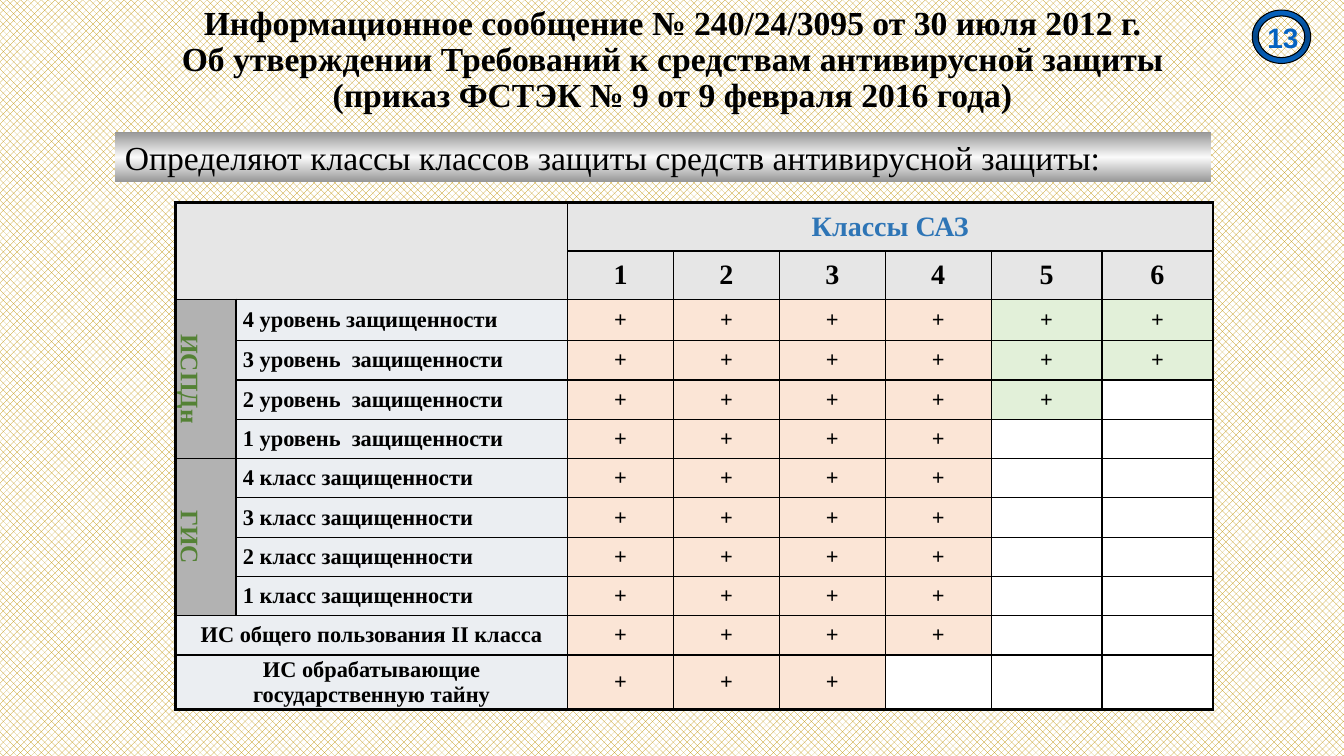
from copy import deepcopy

from lxml.etree import SubElement
from pptx import Presentation
from pptx.dml.color import RGBColor
from pptx.enum.dml import MSO_PATTERN
from pptx.enum.shapes import MSO_SHAPE as SHAPE
from pptx.enum.text import MSO_ANCHOR as ANCHOR, PP_ALIGN as ALIGN
from pptx.oxml.ns import qn
from pptx.util import Inches, Pt

TITLE = [
    "Информационное сообщение № 240/24/3095 от 30 июля 2012 г.",
    "Об утверждении Требований к средствам антивирусной защиты",
    "(приказ ФСТЭК № 9 от 9 февраля 2016 года)",
]
BANNER = "Определяют классы классов защиты средств антивирусной защиты:"
NUMBER = "13"
HEADING = "Классы САЗ"
CLASSES = 6
COMMON_CLASSES = 4  # pluses up to this class are peach, later ones green
# group (None spans both label columns), then (label, number of pluses)
GROUPS = [
    ("ИСПДн", [("4 уровень защищенности", 6), ("3 уровень  защищенности", 6),
               ("2 уровень  защищенности", 5), ("1 уровень  защищенности", 4)]),
    ("ГИС", [("4 класс защищенности", 4), ("3 класс защищенности", 4),
             ("2 класс защищенности", 4), ("1 класс защищенности", 4)]),
    (None, [("ИС общего пользования II класса", 4),
            ("ИС обрабатывающие государственную тайну", 3)]),
]
COLS = [0.6, 3.29] + [1.05] * 4 + [1.1] * 2
ROWS = [0.48, 0.48, 0.41] + [0.39] * 8 + [0.54]
HEAD, GROUP, LABEL = "E6E6E6", "B2B2B2", "EBEEF2"
PEACH, GREEN, WHITE = "FBE5D6", "E2F0D9", "FFFFFF"
THIN, THICK = 1, 2.25


def rgb(value):
    return RGBColor.from_string(value)


def write(tf, lines, size=16, color="000000", bold=True, align=ALIGN.LEFT,
          font="Times New Roman", spacing=None):
    for i, line in enumerate(lines):
        p = tf.paragraphs[0] if i == 0 else tf.add_paragraph()
        p.alignment = align
        p.line_spacing = spacing
        r = p.add_run()
        r.text = line
        r.font.name, r.font.size, r.font.bold = font, Pt(size), bold
        r.font.color.rgb = rgb(color)


def add_box(s, x, y, w, h):
    sp = s.shapes.add_textbox(Inches(x), Inches(y), Inches(w), Inches(h))
    sp.text_frame.word_wrap = True
    sp.text_frame.vertical_anchor = ANCHOR.MIDDLE
    return sp


def add_gradient_shape(s, kind, x, y, w, h, edge, middle):
    """Add a shape shaded vertically from edge to middle and back."""
    sp = s.shapes.add_shape(kind, Inches(x), Inches(y), Inches(w), Inches(h))
    sp.shadow.inherit = False
    sp.fill.gradient()
    sp.fill.gradient_angle = 90
    stops = sp._element.spPr.find(qn("a:gradFill")).find(qn("a:gsLst"))
    stops.append(deepcopy(stops[-1]))
    for stop, pos, color in zip(sp.fill.gradient_stops, (0, 0.5, 1), (edge, middle, edge)):
        stop.position = pos
        stop.color.rgb = rgb(color)
    sp.line.fill.background()
    return sp


def set_borders(cell, left, top, bottom):
    tc_pr = cell._tc.get_or_add_tcPr()
    sides = [("L", left), ("R", THIN), ("T", top), ("B", bottom)]
    for i, (side, width) in enumerate(sides):
        ln = SubElement(tc_pr, qn("a:ln" + side), w=str(int(Pt(width))))
        fill = SubElement(ln, qn("a:solidFill"))
        SubElement(fill, qn("a:srgbClr"), val="000000")
        tc_pr.insert(i, ln)


def fill_cell(cell, back, text=None, margin=0.07, align=ALIGN.CENTER, **fmt):
    cell.fill.solid()
    cell.fill.fore_color.rgb = rgb(back)
    cell.vertical_anchor = ANCHOR.MIDDLE
    cell.margin_left = cell.margin_right = Inches(margin)
    cell.margin_top = cell.margin_bottom = 0
    if text:
        write(cell.text_frame, [text], align=align, **fmt)


def add_class_table(s):
    tbl = s.shapes.add_table(len(ROWS), len(COLS), Inches(1.74), Inches(2.01),
                             Inches(sum(COLS)), Inches(sum(ROWS))).table
    tbl.first_row = tbl.horz_banding = False
    for col, width in zip(tbl.columns, COLS):
        col.width = Inches(width)
    for row, height in zip(tbl.rows, ROWS):
        row.height = Inches(height)
    for r in range(len(ROWS)):
        for c in range(len(COLS)):
            set_borders(tbl.cell(r, c), THIN if c else THICK, THIN if r else THICK,
                        THICK if r == len(ROWS) - 1 else THIN)

    tbl.cell(0, 0).merge(tbl.cell(1, 1))
    fill_cell(tbl.cell(0, 0), HEAD)
    tbl.cell(0, 2).merge(tbl.cell(0, CLASSES + 1))
    fill_cell(tbl.cell(0, 2), HEAD, HEADING, margin=0, size=20, color="2E75B6")
    for n in range(1, CLASSES + 1):
        fill_cell(tbl.cell(1, n + 1), HEAD, str(n), margin=0, size=20)

    r = 2
    for group, items in GROUPS:
        if group:
            cell = tbl.cell(r, 0)
            cell.merge(tbl.cell(r + len(items) - 1, 0))
            fill_cell(cell, GROUP, group, size=18, color="548235")
            cell._tc.get_or_add_tcPr().set("vert", "vert")
        for label, pluses in items:
            if group:
                fill_cell(tbl.cell(r, 1), LABEL, label, align=ALIGN.LEFT)
            else:
                tbl.cell(r, 0).merge(tbl.cell(r, 1))
                fill_cell(tbl.cell(r, 0), LABEL, label)
            for n in range(1, CLASSES + 1):
                if n <= pluses:
                    fill_cell(tbl.cell(r, n + 1), PEACH if n <= COMMON_CLASSES else GREEN, "+")
                else:
                    fill_cell(tbl.cell(r, n + 1), WHITE)
            r += 1


def main():
    prs = Presentation()
    prs.slide_width, prs.slide_height = Inches(13.33), Inches(7.5)
    s = prs.slides.add_slide(prs.slide_layouts[6])
    bg = s.background.fill
    bg.patterned()
    bg.pattern = MSO_PATTERN.PERCENT_50
    bg.fore_color.rgb, bg.back_color.rgb = rgb("BF9000"), rgb(WHITE)

    banner = add_gradient_shape(s, SHAPE.RECTANGLE, 1.14, 1.31, 10.87, 0.5, "969696", "FAFAFA")
    banner.text_frame.word_wrap = True
    banner.text_frame.vertical_anchor = ANCHOR.MIDDLE
    write(banner.text_frame, [BANNER], size=24, bold=False)

    add_class_table(s)

    title = add_box(s, 0.92, 0.14, 11.5, 0.92)
    write(title.text_frame, TITLE, size=24, align=ALIGN.CENTER, spacing=0.9)

    ring = add_gradient_shape(s, SHAPE.DONUT, 12.42, 0.1, 0.58, 0.53, "0563C1", "04478A")
    ring.adjustments[0] = 0.11
    ring.line.color.rgb = rgb("000000")
    ring.line.width = Pt(0.75)

    tf = add_box(s, 12.52, 0.2, 0.43, 0.34).text_frame
    tf.margin_left = Inches(0.05)
    tf.margin_right = tf.margin_top = tf.margin_bottom = 0
    write(tf, [NUMBER], size=20, color="0563C1", font="Arial")

    prs.save("out.pptx")


if __name__ == "__main__":
    main()
